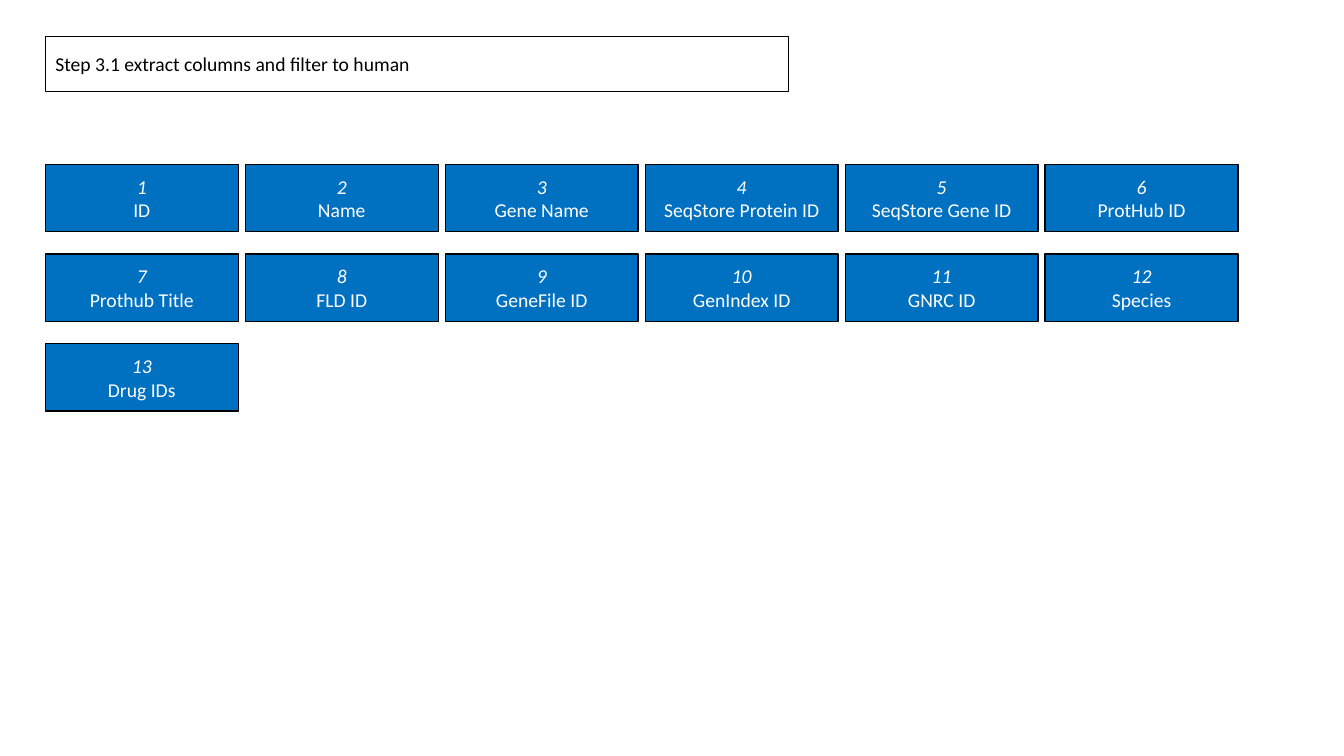
from pptx import Presentation
from pptx import util as u
from pptx.dml.color import RGBColor
from pptx.enum import shapes, text

HUES = {"ink": "000000", "blue": "0070C0", "pale": "FFFFFF"}
FONT = {"name": "Calibri", "size": u.Pt(14)}
FIELDS = [
    "ID", "Name", "Gene Name", "SeqStore Protein ID", "SeqStore Gene ID", "ProtHub ID",
    "Prothub Title", "FLD ID", "GeneFile ID", "GenIndex ID", "GNRC ID", "Species",
    "Drug IDs",
]
COLS, GAP = 6, 0.07
LEFT, RIGHT = 0.45, 12.28
WIDE = (RIGHT - LEFT - GAP * (COLS - 1)) / COLS
TOP, HIGH, STEP = 1.63, 0.67, 0.89


def hue(name):
    return RGBColor.from_string(HUES[name])


class Board:
    """Draws boxes on one slide in a shared style."""

    def __init__(self, slide):
        self.slide = slide

    def box(self, x, y, w, h, lines, ink, align, fill=None):
        """Add a box; lines holds (words, italic) pairs, one per paragraph."""
        spot = [u.Inches(n) for n in (x, y, w, h)]
        shape = self.slide.shapes.add_shape(shapes.MSO_SHAPE.RECTANGLE, *spot)
        shape.shadow.inherit = False
        if fill:
            shape.fill.solid()
            shape.fill.fore_color.rgb = hue(fill)
        else:
            shape.fill.background()
        shape.line.color.rgb = hue("ink")
        shape.line.width = u.Pt(1)
        frame = shape.text_frame
        frame.word_wrap = True
        frame.vertical_anchor = text.MSO_ANCHOR.MIDDLE
        for i, (words, slant) in enumerate(lines):
            para = frame.add_paragraph() if i else frame.paragraphs[0]
            para.alignment = align
            run = para.add_run()
            run.text = words
            for key, val in {**FONT, "italic": slant}.items():
                setattr(run.font, key, val)
            run.font.color.rgb = hue(ink)

    def title(self, words):
        self.box(LEFT, 0.36, 7.37, 0.55, [(words, False)], "ink", text.PP_ALIGN.LEFT)

    def field(self, index, name):
        row, col = divmod(index, COLS)
        lines = [(str(index + 1), True), (name, False)]
        self.box(LEFT + col * (WIDE + GAP), TOP + row * STEP, WIDE, HIGH,
                 lines, "pale", text.PP_ALIGN.CENTER, "blue")


def main():
    deck = Presentation()
    deck.slide_width, deck.slide_height = u.Inches(13.33), u.Inches(7.5)
    board = Board(deck.slides.add_slide(deck.slide_layouts[6]))
    board.title("Step 3.1 extract columns and filter to human")
    for index, name in enumerate(FIELDS):
        board.field(index, name)
    deck.save("out.pptx")


if __name__ == "__main__":
    main()
